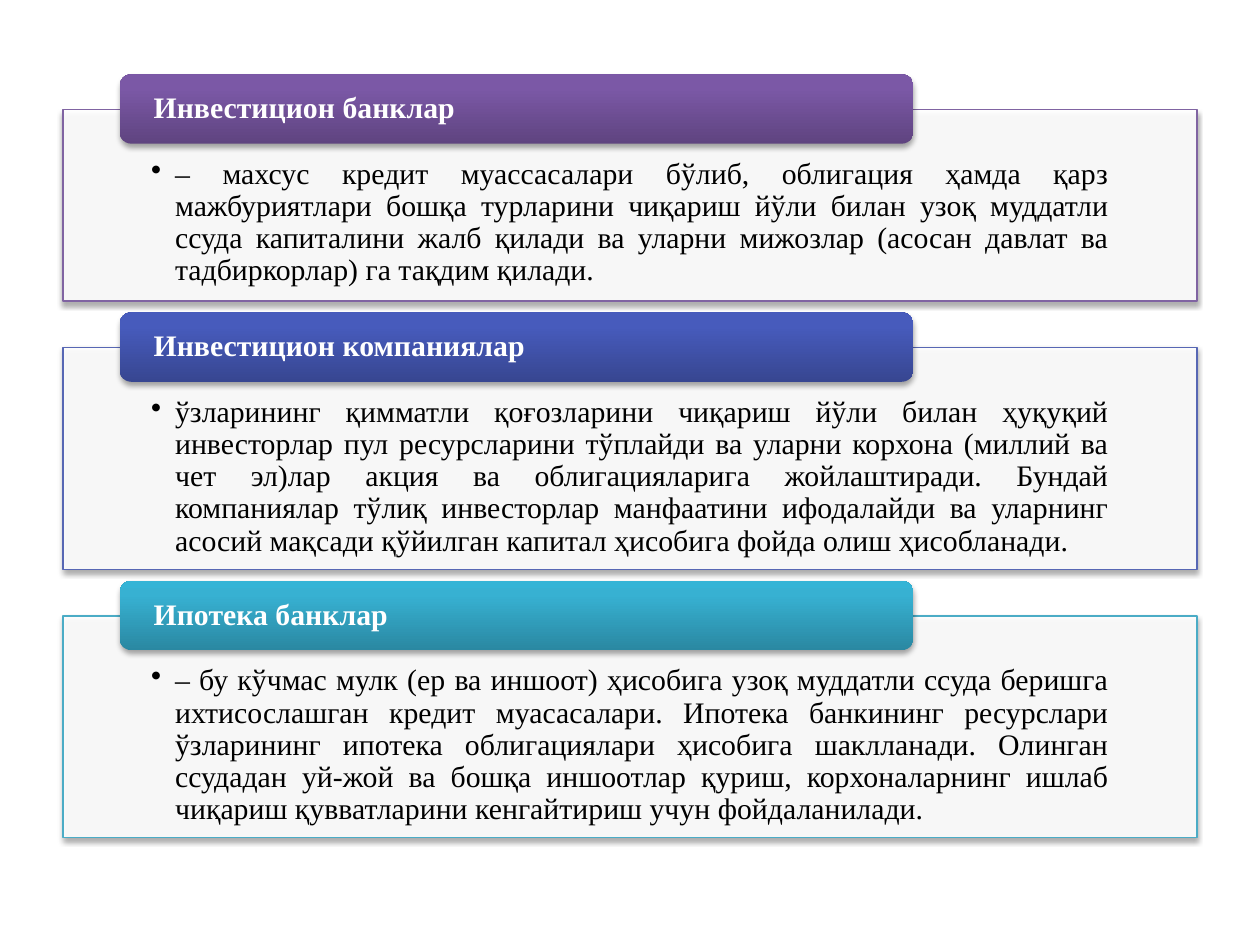
from copy import deepcopy
from dataclasses import dataclass

from lxml import etree
from pptx import Presentation
from pptx import util as u
from pptx.dml.color import RGBColor
from pptx.enum import shapes, text
from pptx.oxml import ns

FONT = "Times New Roman"
WHITE = RGBColor(0xFF, 0xFF, 0xFF)
BLACK = RGBColor(0, 0, 0)
PURPLE = RGBColor(0x80, 0x64, 0xA2)
PURPLE_SHADES = (RGBColor(0x5F, 0x44, 0x80), RGBColor(0x7B, 0x58, 0xA6), RGBColor(0x7C, 0x57, 0xA8))
BLUE = RGBColor(0x57, 0x67, 0xB4)
BLUE_SHADES = (RGBColor(0x37, 0x46, 0x91), RGBColor(0x47, 0x5B, 0xBC), RGBColor(0x45, 0x5A, 0xBF))
TEAL = RGBColor(0x4B, 0xAC, 0xC6)
TEAL_SHADES = (RGBColor(0x2A, 0x88, 0xA2), RGBColor(0x37, 0xB1, 0xD2), RGBColor(0x34, 0xB4, 0xD6))

FIRST_TOP, PANEL_GAP = 0.87, 0.37
BAR_RISE, BAR_HEIGHT, BAR_INSET = 0.28, 0.55, 0.03
BULLET_INDENT = 0.19


@dataclass(frozen=True)
class Section:
    title: str
    body: str
    height: float
    outline: RGBColor
    shades: tuple[RGBColor, RGBColor, RGBColor]


SECTIONS = [
    Section(
        "Инвестицион банклар",
        "– махсус кредит муассасалари бўлиб, облигация ҳамда қарз мажбуриятлари бошқа "
        "турларини чиқариш йўли билан узоқ муддатли ссуда капиталини жалб қилади ва уларни "
        "мижозлар (асосан давлат ва тадбиркорлар) га тақдим қилади.",
        1.52, PURPLE, PURPLE_SHADES,
    ),
    Section(
        "Инвестицион компаниялар",
        "ўзларининг қимматли қоғозларини чиқариш йўли билан ҳуқуқий инвесторлар пул "
        "ресурсларини тўплайди ва уларни корхона (миллий ва чет эл)лар акция ва "
        "облигацияларига жойлаштиради. Бундай компаниялар тўлиқ инвесторлар манфаатини "
        "ифодалайди ва уларнинг асосий мақсади қўйилган капитал ҳисобига фойда олиш ҳисобланади.",
        1.76, BLUE, BLUE_SHADES,
    ),
    Section(
        "Ипотека банклар",
        "– бу кўчмас мулк (ер ва иншоот) ҳисобига узоқ муддатли ссуда беришга ихтисослашган "
        "кредит муасасалари. Ипотека банкининг ресурслари ўзларининг ипотека облигациялари "
        "ҳисобига шаклланади. Олинган ссудадан уй-жой ва бошқа иншоотлар қуриш, "
        "корхоналарнинг ишлаб чиқариш қувватларини кенгайтириш учун фойдаланилади.",
        1.76, TEAL, TEAL_SHADES,
    ),
]


def add_shadow(shape) -> None:
    shape.shadow.inherit = False
    effects = shape._element.spPr.find(ns.qn("a:effectLst"))
    shadow = etree.SubElement(
        effects, ns.qn("a:outerShdw"), blurRad=str(u.Pt(3.1)), dist=str(u.Pt(1.8)),
        dir="5400000", rotWithShape="0",
    )
    color = etree.SubElement(shadow, ns.qn("a:srgbClr"), val=str(BLACK))
    etree.SubElement(color, ns.qn("a:alpha"), val="35000")


def add_text(page, content: str, area: tuple, *, insets: tuple, color: RGBColor,
             bold: bool = False, bullet: bool = False,
             align=text.PP_ALIGN.LEFT, anchor=text.MSO_ANCHOR.TOP) -> None:
    frame = page.shapes.add_textbox(*map(u.Inches, area)).text_frame
    frame.word_wrap = True
    frame.vertical_anchor = anchor
    frame.margin_left, frame.margin_top, frame.margin_right, frame.margin_bottom = map(u.Inches, insets)
    para = frame.paragraphs[0]
    para.alignment = align
    para.line_spacing = 0.9
    if bullet:
        para.level = 1
        properties = para._p.get_or_add_pPr()
        properties.set("marL", str(u.Inches(BULLET_INDENT)))
        properties.set("indent", str(-u.Inches(BULLET_INDENT)))
        etree.SubElement(properties, ns.qn("a:buChar"), char="•")
    span = para.add_run()
    span.text = content
    span.font.name = FONT
    span.font.size = u.Pt(17)
    span.font.bold = bold
    span.font.color.rgb = color


def add_panel(page, section: Section, top: float) -> None:
    area = (0.5, top, 9, section.height)
    box = page.shapes.add_shape(shapes.MSO_SHAPE.RECTANGLE, *map(u.Inches, area))
    box.fill.solid()
    box.fill.fore_color.rgb = WHITE
    color = box._element.spPr.find(ns.qn("a:solidFill")).find(ns.qn("a:srgbClr"))
    etree.SubElement(color, ns.qn("a:alpha"), val="90000")
    box.line.color.rgb = section.outline
    box.line.width = u.Pt(0.75)
    add_shadow(box)
    add_text(page, section.body, area, insets=(0.7, 0.39, 0.7, 0.13), color=BLACK,
             bullet=True, align=text.PP_ALIGN.JUSTIFY)


def add_title_bar(page, section: Section, top: float) -> None:
    left, width = 0.95, 6.3
    bar = page.shapes.add_shape(
        shapes.MSO_SHAPE.ROUNDED_RECTANGLE, *map(u.Inches, (left, top, width, BAR_HEIGHT)))
    bar.fill.gradient()
    bar.fill.gradient_angle = 90
    stop_list = bar._element.spPr.find(".//" + ns.qn("a:gsLst"))
    stop_list.append(deepcopy(stop_list[0]))
    for stop, position, shade in zip(bar.fill.gradient_stops, (0, 0.8, 1), section.shades):
        stop.position = position
        stop.color.rgb = shade
    bar.line.fill.background()
    add_shadow(bar)
    area = (left + BAR_INSET, top + BAR_INSET, width - 2 * BAR_INSET, BAR_HEIGHT - 2 * BAR_INSET)
    add_text(page, section.title, area, insets=(0.24, 0, 0.24, 0), color=WHITE,
             bold=True, anchor=text.MSO_ANCHOR.MIDDLE)


def main() -> None:
    """Build a slide of three titled panels on financial institutions."""
    deck = Presentation()
    deck.slide_width, deck.slide_height = u.Inches(10), u.Inches(7.5)
    page = deck.slides.add_slide(deck.slide_layouts[6])
    top = FIRST_TOP
    for section in SECTIONS:
        add_panel(page, section, top)
        add_title_bar(page, section, top - BAR_RISE)
        top += section.height + PANEL_GAP
    deck.save("out.pptx")


if __name__ == "__main__":
    main()
